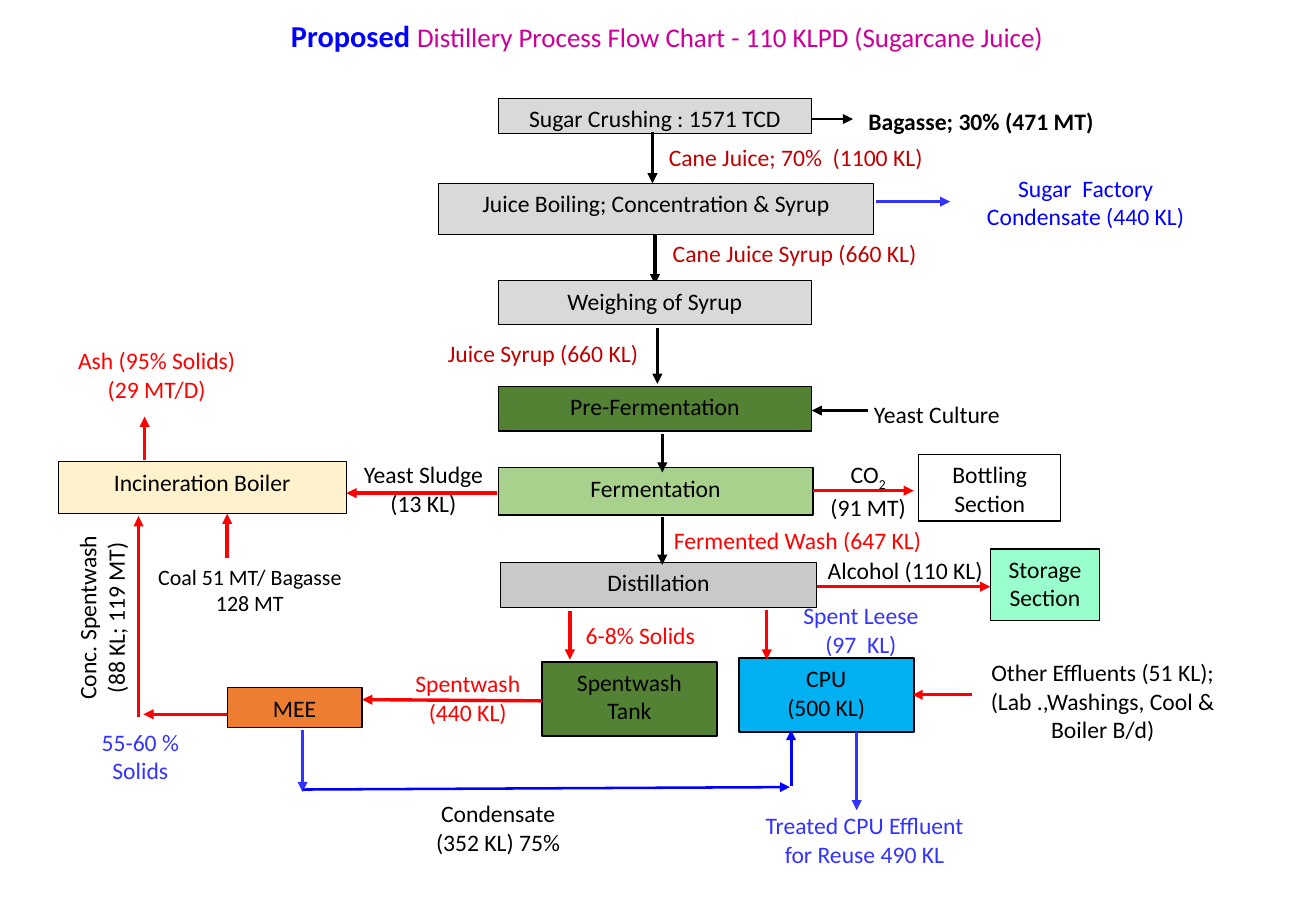
from lxml.etree import SubElement
from pptx import Presentation
from pptx.dml.color import RGBColor
from pptx.enum.shapes import MSO_CONNECTOR as Connector, MSO_SHAPE as Shape
from pptx.enum.text import PP_ALIGN as Align
from pptx.oxml.ns import qn
from pptx.util import Inches, Pt

COLORS = {
    "black": "000000", "white": "FFFFFF", "red": "FF0000", "dark red": "C00000",
    "blue": "0000FF", "soft blue": "3333FF", "magenta": "CC0099",
    "grey": "D9D9D9", "mid grey": "C9C9C9", "dark green": "548235",
    "light green": "A9D18E", "mint": "99FFCC", "sky": "00B0F0",
    "orange": "ED7D31", "cream": "FFF2CC",
}


def rgb(name):
    return RGBColor.from_string(COLORS[name])


def write(paragraph, text, size=14, color="black", bold=False, baseline=None):
    run = paragraph.add_run()
    run.text = text
    run.font.name = "Calibri"
    run.font.size = Pt(size)
    run.font.bold = bold
    run.font.color.rgb = rgb(color)
    if baseline:
        run.font._element.set("baseline", str(baseline))


class FlowChart:
    """Draws boxes, labels and arrows of a flow chart on one slide."""

    def __init__(self, slide):
        self.slide = slide

    def fill_text(self, shape, text, **style):
        frame = shape.text_frame
        frame.word_wrap = True
        for index, line in enumerate(text.split("\n")):
            paragraph = frame.add_paragraph() if index else frame.paragraphs[0]
            paragraph.alignment = Align.CENTER
            for part, piece in enumerate(line.split("\v")):
                if part:
                    paragraph.add_line_break()
                write(paragraph, piece, **style)
        return frame

    def box(self, text, left, top, width, height, fill, border=0.75):
        shape = self.slide.shapes.add_shape(
            Shape.RECTANGLE, Inches(left), Inches(top), Inches(width), Inches(height))
        shape.shadow.inherit = False
        shape.fill.solid()
        shape.fill.fore_color.rgb = rgb(fill)
        shape.line.color.rgb = rgb("black")
        shape.line.width = Pt(border)
        frame = self.fill_text(shape, text)
        frame._txBody.bodyPr.set("anchor", "t")

    def label(self, text, left, top, width, height, color="black", vertical=False, **style):
        shape = self.slide.shapes.add_textbox(
            Inches(left), Inches(top), Inches(width), Inches(height))
        frame = self.fill_text(shape, text, color=color, **style)
        if vertical:
            frame._txBody.bodyPr.set("vert", "vert270")
        return frame

    def arrow(self, x1, y1, x2, y2, color="red", width=2):
        connector = self.slide.shapes.add_connector(
            Connector.STRAIGHT, Inches(x1), Inches(y1), Inches(x2), Inches(y2))
        connector.line.color.rgb = rgb(color)
        connector.line.width = Pt(width)
        SubElement(connector.line._get_or_add_ln(), qn("a:tailEnd"), type="triangle")
        SubElement(connector._element.spPr, qn("a:effectLst"))


BOXES = [
    ("Sugar Crushing : 1571 TCD", 4.1, 0.81, 2.58, 0.29, "grey"),
    ("Juice Boiling; Concentration & Syrup", 3.61, 1.51, 3.58, 0.42, "grey"),
    ("Weighing of Syrup", 4.1, 2.31, 2.58, 0.36, "grey"),
    ("Pre-Fermentation", 4.1, 3.18, 2.58, 0.37, "dark green"),
    ("Fermentation", 4.1, 3.85, 2.59, 0.39, "light green"),
    ("Distillation", 4.12, 4.63, 2.6, 0.37, "mid grey"),
    ("Incineration Boiler", 0.48, 3.8, 2.37, 0.43, "cream"),
    ("Bottling Section", 7.56, 3.74, 1.17, 0.55, "white"),
    ("Storage Section", 8.15, 4.52, 0.9, 0.59, "mint"),
    ("MEE", 1.87, 5.66, 1.11, 0.33, "orange"),
    ("Spentwash\nTank", 4.46, 5.45, 1.44, 0.61, "dark green", 1.25),
    ("CPU\n(500 KL)", 6.08, 5.42, 1.44, 0.61, "sky", 1.25),
]

ARROWS = [
    (5.37, 1.09, 5.37, 1.51, "black"),
    (5.41, 2.7, 5.41, 3.16, "black"),
    (5.45, 3.57, 5.45, 3.89, "black"),
    (5.45, 4.26, 5.45, 4.65, "black"),
    (6.68, 0.98, 7.02, 0.98, "black", 1.5),
    (7.14, 3.38, 6.68, 3.38, "black", 1.5),
    (7.21, 1.66, 7.82, 1.66, "soft blue", 1.5),
    (4.09, 4.06, 2.85, 4.06),
    (6.69, 4.04, 7.52, 4.04),
    (6.72, 4.83, 8.15, 4.83),
    (4.69, 5.03, 4.69, 5.43),
    (6.31, 5.02, 6.31, 5.43),
    (4.46, 5.77, 2.98, 5.76),
    (8, 5.72, 7.51, 5.72),
    (1.87, 5.88, 1.18, 5.88),
    (1.14, 5.9, 1.14, 4.25),
    (1.19, 3.79, 1.19, 3.43),
    (1.87, 4.59, 1.87, 4.23),
    (2.49, 6.01, 2.49, 6.52, "soft blue", 1.5),
    (2.49, 6.5, 6.5, 6.48, "blue", 1.5),
    (6.51, 6.47, 6.51, 6.01, "blue", 1.75),
    (7.05, 6.03, 7.05, 6.67, "soft blue", 1.5),
]

LABELS = [
    ("Cane Juice; 70%  (1100 KL)", 5.32, 1.13, 2.46, 0.23, "dark red"),
    ("Cane Juice Syrup (660 KL)", 5.3, 1.92, 2.48, 0.37, "dark red"),
    ("Juice Syrup (660 KL)", 3.4, 2.74, 2.14, 0.37, "dark red"),
    ("Sugar  Factory\vCondensate (440 KL)", 7.81, 1.38, 2.25, 0.53, "blue"),
    ("Yeast Culture", 6.92, 3.24, 1.58, 0.41),
    ("Yeast Sludge\n(13 KL)", 2.6, 3.74, 1.77, 0.44),
    ("Fermented Wash (647 KL)", 5.15, 4.28, 2.83, 0.37, "red"),
    ("Alcohol (110 KL)", 6.54, 4.53, 1.82, 0.35),
    ("Spent Leese\n(97  KL)", 5.96, 4.9, 2.25, 0.34, "soft blue"),
    ("6-8% Solids", 4.57, 5.06, 1.4, 0.24, "red"),
    ("Spentwash\n(440 KL)", 2.97, 5.46, 1.76, 0.35, "red"),
    ("Other Effluents (51 KL);\n(Lab .,Washings, Cool &\vBoiler B/d)", 7.8, 5.37, 2.55, 0.89),
    ("Condensate\n(352 KL) 75%", 3.37, 6.53, 1.46, 0.39),
    ("Treated CPU Effluent\nfor Reuse 490 KL", 6.19, 6.63, 1.85, 0.87, "soft blue"),
    ("Ash (95% Solids)\n(29 MT/D)", 0.25, 2.8, 2.08, 0.56, "red"),
    ("55-60 % Solids", 0.53, 5.94, 1.25, 0.38, "soft blue"),
    ("Conc. Spentwash\n(88 KL; 119 MT)", 0.55, 4.29, 0.63, 1.59, "black", True),
]


def main():
    presentation = Presentation()
    presentation.slide_width = Inches(10.83)
    presentation.slide_height = Inches(7.5)
    chart = FlowChart(presentation.slides.add_slide(presentation.slide_layouts[6]))

    title = chart.label("Proposed ", 1.19, 0.09, 8.6, 0.4, "blue", size=18, bold=True)
    write(title.paragraphs[0], "Distillery Process Flow Chart - 110 KLPD (Sugarcane Juice)",
          size=16, color="magenta")

    chart.arrow(5.39, 1.92, 5.39, 2.34, "black")
    for box in BOXES:
        chart.box(*box)
    for arrow in ARROWS:
        chart.arrow(*arrow)
    for label in LABELS:
        chart.label(*label)

    chart.label("Bagasse; 30% (471 MT)", 6.91, 0.83, 2.33, 0.32, bold=True)
    chart.label("Coal 51 MT/ Bagasse 128 MT", 1.18, 4.59, 1.75, 0.52, size=13)
    carbon_dioxide = chart.label("CO\n(91 MT)", 6.59, 3.74, 1.11, 0.45)
    write(carbon_dioxide.paragraphs[0], "2", baseline=-25000)
    presentation.save("out.pptx")


if __name__ == "__main__":
    main()
